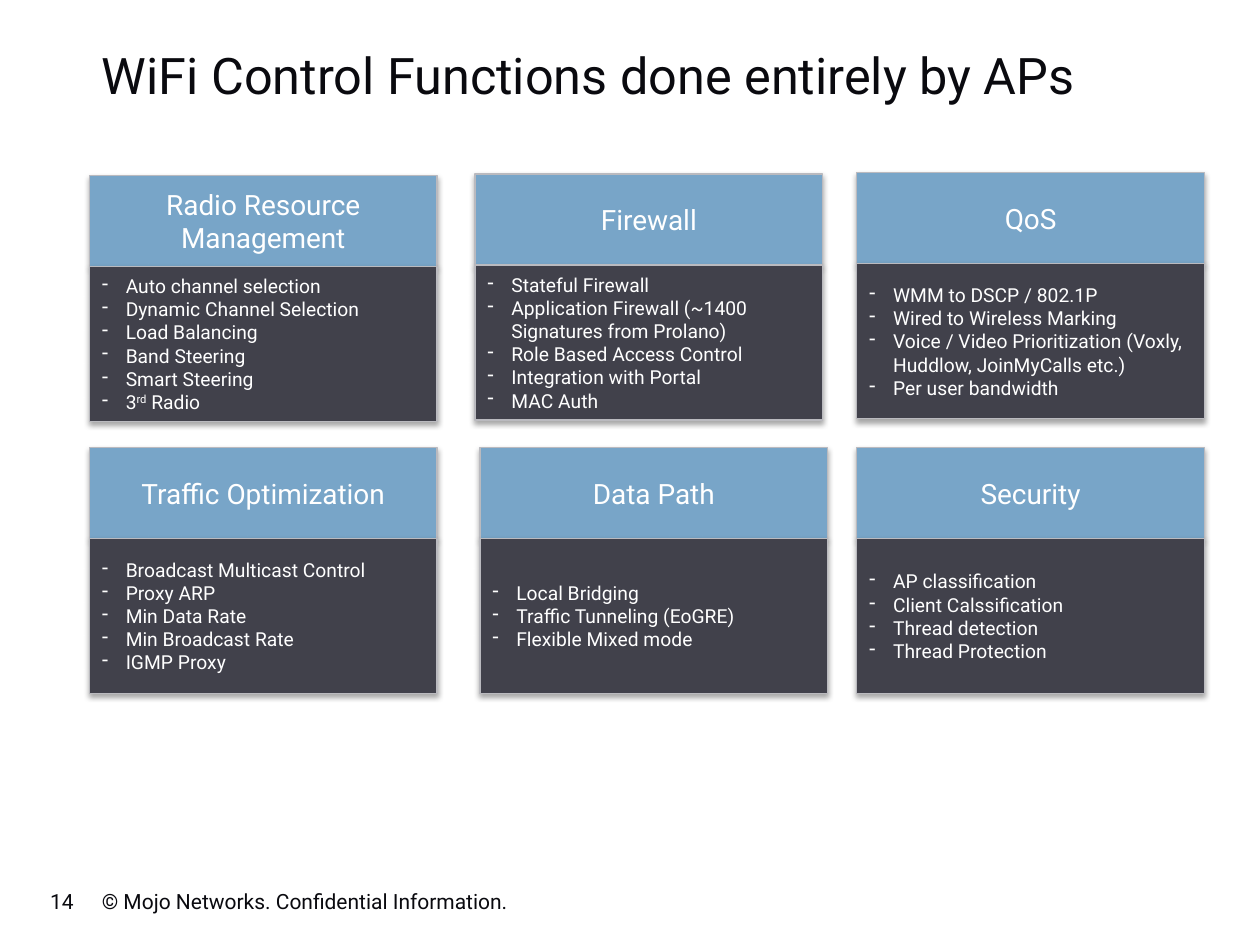
from dataclasses import dataclass

from lxml import etree
from pptx import Presentation
from pptx.dml.color import RGBColor
from pptx.enum.shapes import MSO_SHAPE
from pptx.enum.text import MSO_ANCHOR, PP_ALIGN
from pptx.oxml import parse_xml
from pptx.oxml.ns import qn
from pptx.util import Inches, Pt

RECTANGLE = MSO_SHAPE.RECTANGLE
TOP, MIDDLE = MSO_ANCHOR.TOP, MSO_ANCHOR.MIDDLE
LEFT, CENTER = PP_ALIGN.LEFT, PP_ALIGN.CENTER
DRAWING = "http://schemas.openxmlformats.org/drawingml/2006/main"


@dataclass(frozen=True)
class Theme:
    """Colours, typeface and type sizes of the deck."""
    font: str = "Roboto"
    ink: str = "0A0A0F"
    light: str = "FFFFFF"
    header: str = "78A5C8"
    body: str = "41414B"
    border: str = "BABABF"
    shadow: str = "000000"
    title_size: float = 28.8
    header_size: float = 16
    body_size: float = 11
    footer_size: float = 12


THEME = Theme()
PAGE_COLUMNS, PAGE_ROWS = 1000, 750
CELL = Inches(10) / PAGE_COLUMNS
CARD_LEFTS, CARD_TOPS = (71, 377, 680), (138, 355)
CARD_WIDTH, CARD_HEIGHT = 276, 195.5
HEADER_SHARE = 0.37

CARDS = [
    [
        {"heading": "Radio Resource Management", "nudge": (0, 1),
         "items": ["Auto channel selection", "Dynamic Channel Selection",
                   "Load Balancing", "Band Steering", "Smart Steering",
                   "3^rd^ Radio"]},
        {"heading": "Firewall", "nudge": (0, 0),
         "items": ["Stateful Firewall",
                   "Application Firewall (~1400 Signatures from Prolano)",
                   "Role Based Access Control", "Integration with Portal",
                   "MAC Auth"]},
        {"heading": "QoS", "nudge": (0, -1),
         "items": ["WMM to DSCP / 802.1P", "Wired to Wireless Marking",
                   "Voice / Video Prioritization (Voxly, Huddlow, JoinMyCalls etc.)",
                   "Per user bandwidth"]},
    ],
    [
        {"heading": "Traffic Optimization", "nudge": (0, 0),
         "items": ["Broadcast Multicast Control", "Proxy ARP", "Min Data Rate",
                   "Min Broadcast Rate", "IGMP Proxy"]},
        {"heading": "Data Path", "nudge": (4, 0),
         "items": ["Local Bridging", "Traffic Tunneling (EoGRE)",
                   "Flexible Mixed mode"]},
        {"heading": "Security", "nudge": (0, 0),
         "items": ["AP classification", "Client Calssification",
                   "Thread detection", "Thread Protection"]},
    ],
]


def place(box):
    """Turn a box in grid cells into slide lengths."""
    return [round(value * CELL) for value in box]


def add_bullet(para):
    """Give a paragraph a hanging dash."""
    properties = para._p.get_or_add_pPr()
    indent = Inches(0.19)
    properties.set("marL", str(indent))
    properties.set("indent", str(-indent))
    etree.SubElement(properties, qn("a:buChar")).set("char", "-")


def write(shape, lines, size, color, anchor=TOP, align=LEFT, bullets=False):
    """Write lines into a shape, raising the parts between carets."""
    frame = shape.text_frame
    for name, value in {"word_wrap": True, "vertical_anchor": anchor}.items():
        setattr(frame, name, value)
    for index, line in enumerate(lines):
        para = frame.add_paragraph() if index else frame.paragraphs[0]
        para.alignment = align
        if bullets:
            add_bullet(para)
        for part, text in enumerate(line.split("^")):
            span = para.add_run()
            span.text = text
            for name, value in {"name": THEME.font, "size": Pt(size)}.items():
                setattr(span.font, name, value)
            span.font.color.rgb = RGBColor.from_string(color)
            if part % 2:
                span._r.get_or_add_rPr().set("baseline", "30000")


def add_label(page, box, text, size):
    """Add a line of plain text in the given box."""
    write(page.shapes.add_textbox(*place(box)), [text], size, THEME.ink)


def add_panel(page, box, fill):
    """Add a bordered rectangle with a soft shadow below it."""
    panel = page.shapes.add_shape(RECTANGLE, *place(box))
    panel.fill.solid()
    panel.fill.fore_color.rgb = RGBColor.from_string(fill)
    panel.line.color.rgb = RGBColor.from_string(THEME.border)
    panel.line.width = Pt(0.75)
    panel.shadow.inherit = False
    effects = panel._element.spPr.find(qn("a:effectLst"))
    effects.append(parse_xml(
        f'<a:outerShdw xmlns:a="{DRAWING}" blurRad="{Pt(3.1)}" dist="{Pt(1.8)}" '
        f'dir="5400000" rotWithShape="0"><a:srgbClr val="{THEME.shadow}">'
        '<a:alpha val="35000"/></a:srgbClr></a:outerShdw>'))
    return panel


def add_card(page, box, heading, items):
    """Stack a heading panel on a list panel inside the box."""
    left, top, width, height = box
    split = height * HEADER_SHARE
    header = add_panel(page, (left, top, width, split), THEME.header)
    write(header, [heading], THEME.header_size, THEME.light, MIDDLE, CENTER)
    body = add_panel(page, (left, top + split, width, height - split), THEME.body)
    write(body, items, THEME.body_size, THEME.light, MIDDLE, bullets=True)


def add_card_grid(page):
    """Lay the cards out in rows and columns."""
    for top, row in zip(CARD_TOPS, CARDS):
        for left, card in zip(CARD_LEFTS, row):
            across, down = card["nudge"]
            box = (left + across, top + down, CARD_WIDTH, CARD_HEIGHT)
            add_card(page, box, card["heading"], card["items"])


def add_footer(page, box):
    """Add the page number and the copyright line."""
    left, top, width, height = box
    add_label(page, (left, top, 70, height), "14", THEME.footer_size)
    add_label(page, (left + 41, top, width - 41, height),
              "© Mojo Networks. Confidential Information.", THEME.footer_size)


def main():
    """Build and save the deck."""
    deck = Presentation()
    deck.slide_width, deck.slide_height = place((PAGE_COLUMNS, PAGE_ROWS))
    page = deck.slides.add_slide(deck.slide_layouts[6])
    add_footer(page, (30, 700, 409, 30))
    add_label(page, (71, 30, 850, 75),
              "WiFi Control Functions done entirely by APs", THEME.title_size)
    add_card_grid(page)
    deck.save("out.pptx")


if __name__ == "__main__":
    main()
